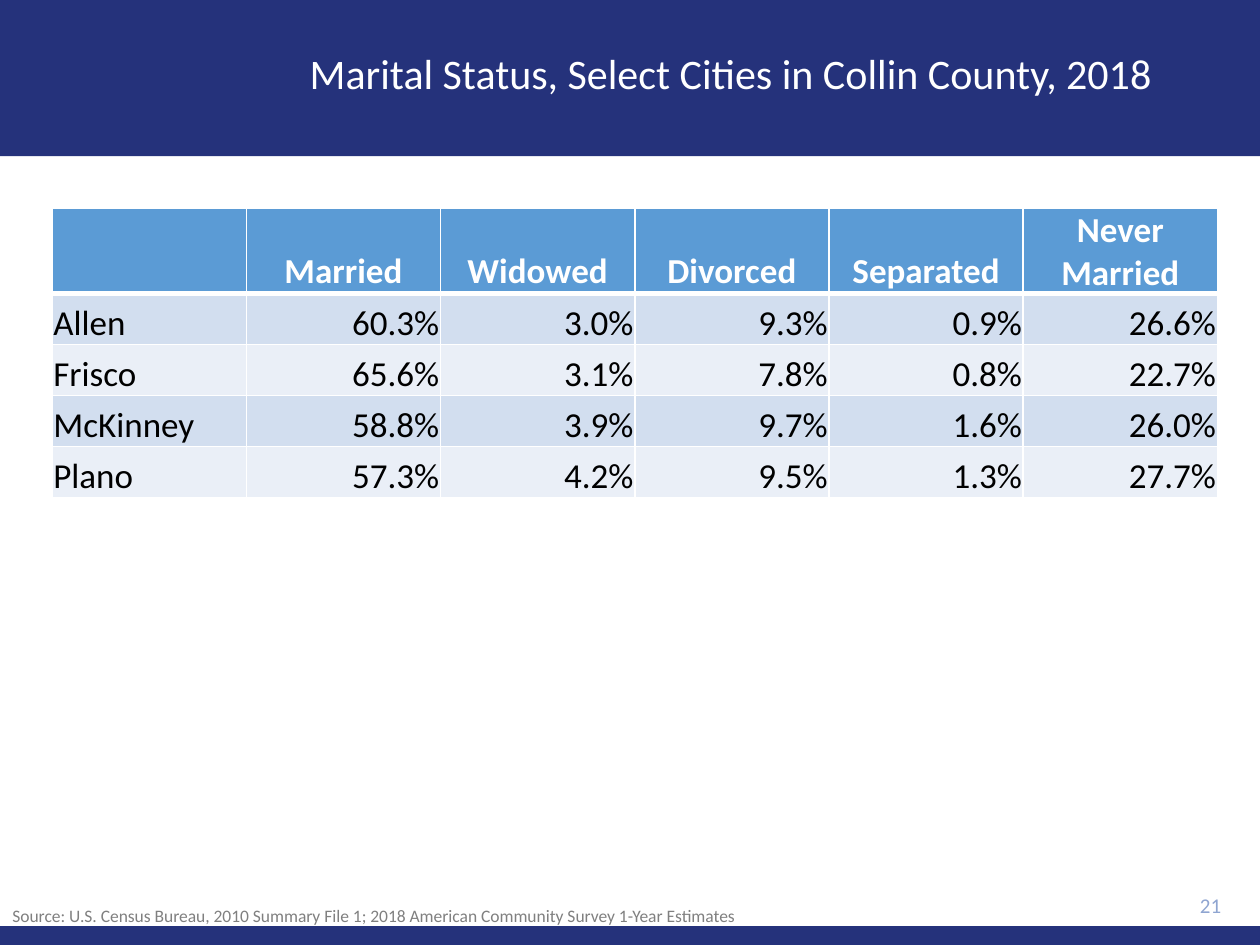
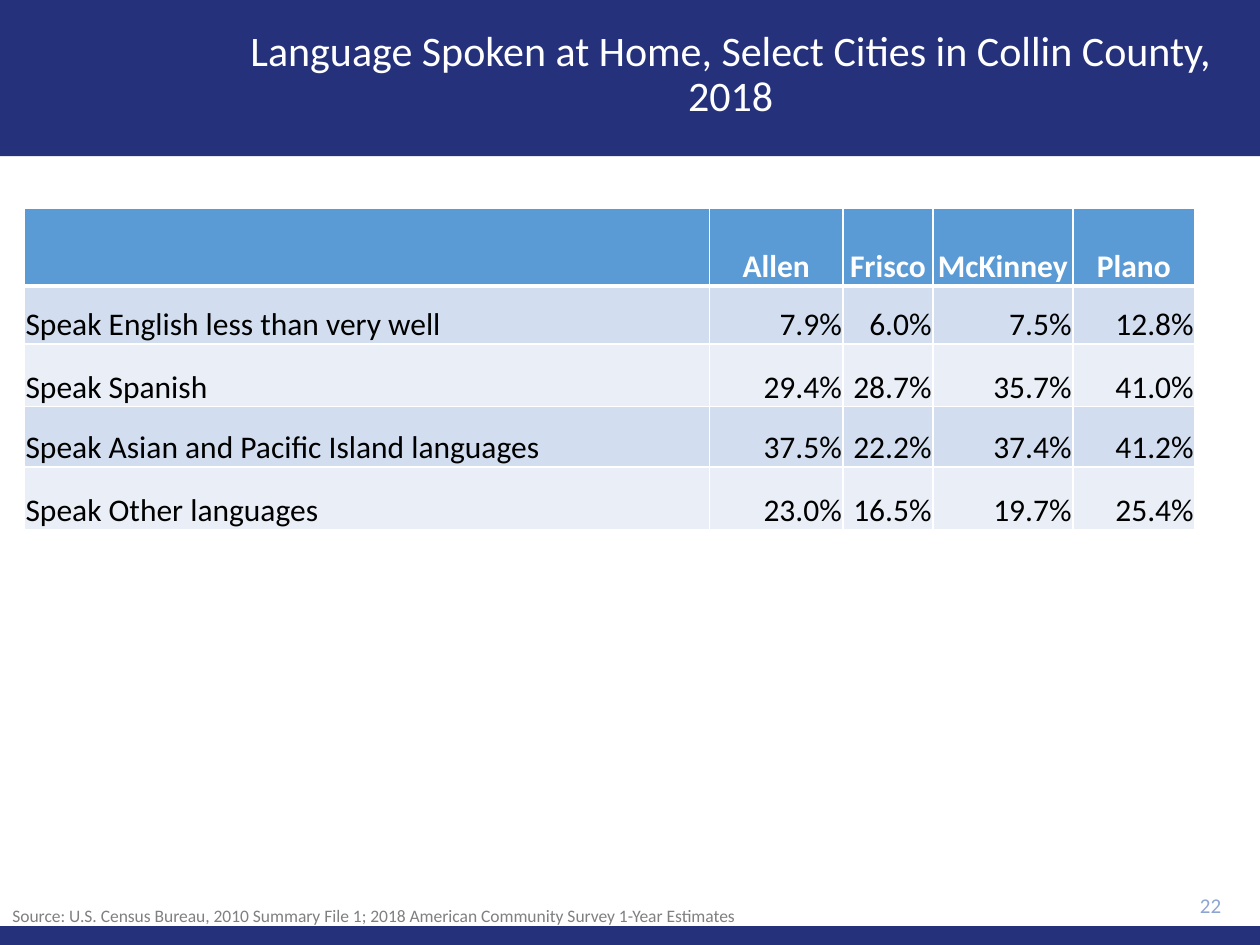
from pptx import Presentation
from pptx.dml.color import RGBColor
from pptx.enum.shapes import MSO_SHAPE
from pptx.enum.text import MSO_ANCHOR, MSO_AUTO_SIZE, PP_ALIGN
from pptx.oxml import parse_xml
from pptx.oxml.ns import nsdecls
from pptx.util import Pt

HUES = {
    "navy": "25327B",
    "head": "5B9BD5",
    "odd": "D2DEEF",
    "even": "EAEFF7",
    "white": "FFFFFF",
    "black": "000000",
    "page": "8FA5D1",
    "note": "808080",
}
SOURCE = ("Source: U.S. Census Bureau, 2010 Summary File 1; "
          "2018 American Community Survey 1-Year Estimates")


class Deck:
    font = "Calibri"

    def __init__(self):
        self.show = Presentation()
        self.show.slide_width, self.show.slide_height = Pt(720), Pt(540)
        self.slide = None

    def hue(self, name):
        return RGBColor.from_string(HUES[name])

    def style(self, para, size, hue, align, bold=False):
        para.alignment = align
        for run in para.runs:
            run.font.name = self.font
            run.font.size = Pt(size)
            run.font.bold = bold
            run.font.color.rgb = self.hue(hue)

    def band(self, top, height):
        band = self.slide.shapes.add_shape(
            MSO_SHAPE.RECTANGLE, 0, Pt(top), self.show.slide_width, Pt(height))
        band.shadow.inherit = False
        band.fill.solid()
        band.fill.fore_color.rgb = self.hue("navy")
        band.line.fill.background()

    def text(self, words, area, size, hue, align=PP_ALIGN.LEFT,
             anchor=MSO_ANCHOR.MIDDLE):
        box = self.slide.shapes.add_textbox(*map(Pt, area))
        frame = box.text_frame
        frame.word_wrap = True
        frame.vertical_anchor = anchor
        frame.text = words
        self.style(frame.paragraphs[0], size, hue, align)
        return frame

    def page(self, title, number):
        blank = self.show.slide_layouts[6]
        self.slide = self.show.slides.add_slide(blank)
        self.band(0, 89.3)
        self.band(529.2, 10.8)
        head = self.text(title, (122.4, 7.2, 590.4, 72), 24, "white",
                         PP_ALIGN.CENTER)
        head.paragraphs[0].line_spacing = 0.9
        self.text(str(number), (640.8, 504.7, 64.1, 24.5), 12, "page",
                  PP_ALIGN.RIGHT)
        note = self.text(SOURCE, (0, 513.4, 679, 19.4), 10, "note",
                         anchor=MSO_ANCHOR.TOP)
        note.auto_size = MSO_AUTO_SIZE.SHAPE_TO_FIT_TEXT

    def edges(self, cell, row):
        props = cell._tc.get_or_add_tcPr()
        thick = {0: "B", 1: "T"}.get(row)
        for spot, side in enumerate("LRTB"):
            width = Pt(3 if side == thick else 1)
            props.insert(spot, parse_xml(
                f'<a:ln{side} {nsdecls("a")} w="{width}"><a:solidFill>'
                f'<a:srgbClr val="{HUES["white"]}"/></a:solidFill></a:ln{side}>'))

    def cell(self, cell, words, row, col, size):
        cell.margin_left = cell.margin_right = cell.margin_top = Pt(0.72)
        cell.margin_bottom = 0
        cell.vertical_anchor = MSO_ANCHOR.BOTTOM
        cell.fill.solid()
        fill = "head" if row == 0 else "odd" if row % 2 else "even"
        cell.fill.fore_color.rgb = self.hue(fill)
        self.edges(cell, row)
        cell.text_frame.text = words
        para = cell.text_frame.paragraphs[0]
        if row == 0:
            self.style(para, size, "white", PP_ALIGN.CENTER, True)
        else:
            align = PP_ALIGN.RIGHT if col else PP_ALIGN.LEFT
            self.style(para, size, "black", align)

    def table(self, left, widths, heights, rows, size):
        grid = self.slide.shapes.add_table(
            len(rows), len(widths), Pt(left), Pt(118.9),
            Pt(sum(widths)), Pt(sum(heights))).table
        for col, width in zip(grid.columns, widths):
            col.width = Pt(width)
        for line, height in zip(grid.rows, heights):
            line.height = Pt(height)
        for row, line in enumerate(rows):
            for col, words in enumerate(line):
                self.cell(grid.cell(row, col), words, row, col, size)


def main():
    deck = Deck()

    deck.page("Marital Status, Select Cities in Collin County, 2018", 21)
    deck.table(29.8, [111] * 6, [48.8] + [29.2] * 4, [
        ["", "Married", "Widowed", "Divorced", "Separated", "Never Married"],
        ["Allen", "60.3%", "3.0%", "9.3%", "0.9%", "26.6%"],
        ["Frisco", "65.6%", "3.1%", "7.8%", "0.8%", "22.7%"],
        ["McKinney", "58.8%", "3.9%", "9.7%", "1.6%", "26.0%"],
        ["Plano", "57.3%", "4.2%", "9.5%", "1.3%", "27.7%"],
    ], 20)

    deck.page("Language Spoken at Home, Select Cities in Collin County, 2018", 22)
    deck.table(13.9, [391.5, 76.4, 51.3, 80, 69.8], [44.6, 33.1, 35.8, 34.6, 35.8], [
        ["", "Allen", "Frisco", "McKinney", "Plano"],
        ["Speak English less than very well", "7.9%", "6.0%", "7.5%", "12.8%"],
        ["Speak Spanish", "29.4%", "28.7%", "35.7%", "41.0%"],
        ["Speak Asian and Pacific Island languages",
         "37.5%", "22.2%", "37.4%", "41.2%"],
        ["Speak Other languages", "23.0%", "16.5%", "19.7%", "25.4%"],
    ], 18)

    deck.show.save("out.pptx")


if __name__ == "__main__":
    main()
